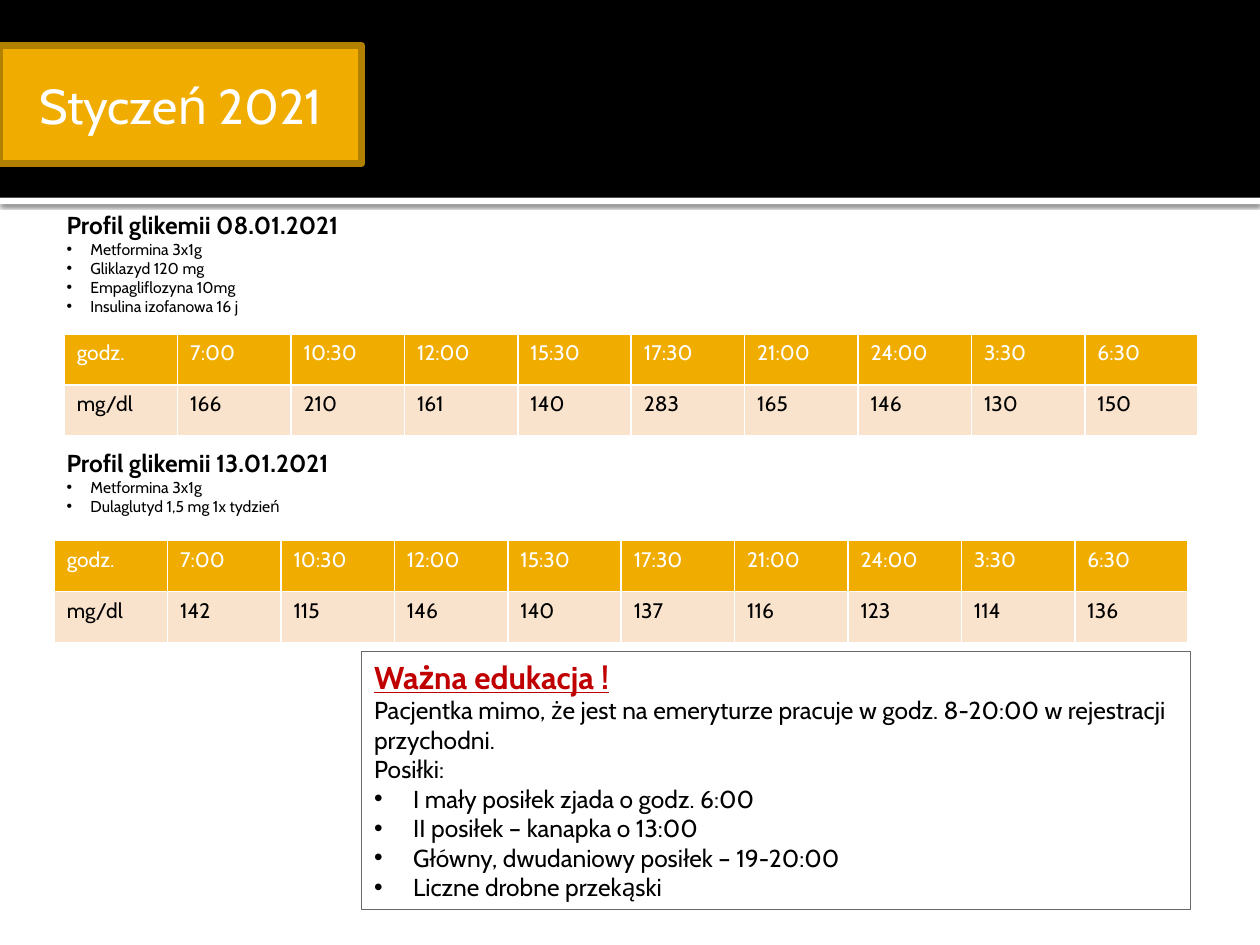
from lxml.etree import SubElement
from pptx import Presentation
from pptx.dml.color import RGBColor
from pptx.enum.shapes import MSO_SHAPE as Preset
from pptx.enum.text import MSO_ANCHOR as Anchor, PP_ALIGN as Align
from pptx.oxml import parse_xml
from pptx.oxml.ns import nsdecls, qn
from pptx.util import Inches, Pt

COLORS = {
    "white": "FFFFFF",
    "black": "000000",
    "gold": "F0AD00",
    "dark_gold": "B28000",
    "cream": "F9E3CC",
    "gray": "68686D",
    "red": "C00000",
}
HOURS = ["godz.", "7:00", "10:30", "12:00", "15:30", "17:30", "21:00", "24:00", "3:30", "6:30"]


def color(name):
    return RGBColor.from_string(COLORS[name])


class SlideBuilder:
    font = "Cabin"

    def __init__(self, page):
        self.page = page

    def format_text(self, para, size, ink="black", bold=False, underline=False):
        for span in para.runs:
            span.font.name = self.font
            span.font.size = Pt(size)
            span.font.bold = bold
            span.font.underline = underline
            span.font.color.rgb = color(ink)

    def rect(self, left, top, width, height, fill, line=None, line_width=0.75):
        box = self.page.shapes.add_shape(
            Preset.RECTANGLE, Inches(left), Inches(top), Inches(width), Inches(height))
        box.shadow.inherit = False
        box.fill.solid()
        box.fill.fore_color.rgb = color(fill)
        if line:
            box.line.color.rgb = color(line)
            box.line.width = Pt(line_width)
        else:
            box.line.fill.background()
        return box

    def cast_shadow(self, box):
        effects = box._element.spPr.find(qn("a:effectLst"))
        effects.append(parse_xml(
            f'<a:outerShdw {nsdecls("a")} blurRad="{Pt(2.5)}" dist="{Pt(0.8)}" dir="5400000">'
            f'<a:srgbClr val="{COLORS["black"]}"><a:alpha val="60000"/></a:srgbClr></a:outerShdw>'))

    def title(self, text, left, top, width, height):
        box = self.rect(left, top, width, height, "gold", "dark_gold", 3.78)
        frame = box.text_frame
        frame.text = text
        frame.vertical_anchor = Anchor.MIDDLE
        frame.paragraphs[0].alignment = Align.CENTER
        self.format_text(frame.paragraphs[0], 28, "white")

    def bullet(self, para, indent):
        props = para._p.get_or_add_pPr()
        props.set("marL", str(Inches(indent)))
        props.set("indent", str(-Inches(indent)))
        SubElement(props, qn("a:buFont"), typeface="Arial")
        SubElement(props, qn("a:buChar"), char="•")

    def fill_text(self, frame, heading, heading_style, plain, bullets, size, indent):
        frame.word_wrap = True
        frame.vertical_anchor = Anchor.TOP
        frame.text = "\n".join([heading, *plain, *bullets])
        for index, para in enumerate(frame.paragraphs):
            para.alignment = Align.LEFT
            if index == 0:
                self.format_text(para, **heading_style)
            else:
                self.format_text(para, size)
            if index > len(plain):
                self.bullet(para, indent)

    def profile(self, heading, drugs, left, top, width, height):
        box = self.page.shapes.add_textbox(
            Inches(left), Inches(top), Inches(width), Inches(height))
        self.fill_text(box.text_frame, heading, {"size": 14, "bold": True}, [], drugs, 9, 0.19)

    def note(self, heading, plain, bullets, left, top, width, height):
        box = self.rect(left, top, width, height, "white", "gray")
        style = {"size": 18, "ink": "red", "bold": True, "underline": True}
        self.fill_text(box.text_frame, heading, style, plain, bullets, 14, 0.31)

    def cell_borders(self, cell):
        props = cell._tc.get_or_add_tcPr()
        for index, side in enumerate(("lnL", "lnR", "lnT", "lnB")):
            props.insert(index, parse_xml(
                f'<a:{side} {nsdecls("a")} w="{Pt(1)}"><a:solidFill>'
                f'<a:srgbClr val="{COLORS["white"]}"/></a:solidFill></a:{side}>'))

    def glucose_table(self, values, left, top):
        rows = [HOURS, ["mg/dl", *values]]
        table = self.page.shapes.add_table(
            len(rows), len(HOURS), Inches(left), Inches(top), Inches(9), Inches(0.81)).table
        for row, texts in enumerate(rows):
            fill, ink = ("gold", "white") if row == 0 else ("cream", "black")
            for column, text in enumerate(texts):
                cell = table.cell(row, column)
                cell.text = str(text)
                cell.fill.solid()
                cell.fill.fore_color.rgb = color(fill)
                self.format_text(cell.text_frame.paragraphs[0], 12, ink)
                self.cell_borders(cell)


def main():
    deck = Presentation()
    deck.slide_width, deck.slide_height = Inches(10), Inches(7.5)
    builder = SlideBuilder(deck.slides.add_slide(deck.slide_layouts[6]))

    builder.cast_shadow(builder.rect(0, 1.57, 10, 0.05, "white"))
    builder.rect(0, 0, 10, 1.57, "black")
    builder.glucose_table([166, 210, 161, 140, 283, 165, 146, 130, 150], 0.51, 2.65)
    builder.title("Styczeń 2021", 0, 0.36, 2.87, 0.94)
    builder.glucose_table([142, 115, 146, 140, 137, 116, 123, 114, 136], 0.43, 4.29)
    builder.profile(
        "Profil glikemii 08.01.2021",
        ["Metformina 3x1g", "Gliklazyd 120 mg", "Empagliflozyna 10mg", "Insulina izofanowa 16 j"],
        0.43, 1.62, 2.83, 1.48)
    builder.profile(
        "Profil glikemii 13.01.2021",
        ["Metformina 3x1g", "Dulaglutyd 1,5 mg 1x tydzień"],
        0.43, 3.51, 2.44, 1.18)
    builder.note(
        "Ważna edukacja !",
        ["Pacjentka mimo, że jest na emeryturze pracuje w godz. 8-20:00 w rejestracji przychodni.",
         "Posiłki:"],
        ["I mały posiłek zjada o godz. 6:00", "II posiłek – kanapka o 13:00",
         "Główny, dwudaniowy posiłek – 19-20:00", "Liczne drobne przekąski"],
        2.87, 5.17, 6.58, 2.05)
    deck.save("out.pptx")


if __name__ == "__main__":
    main()
